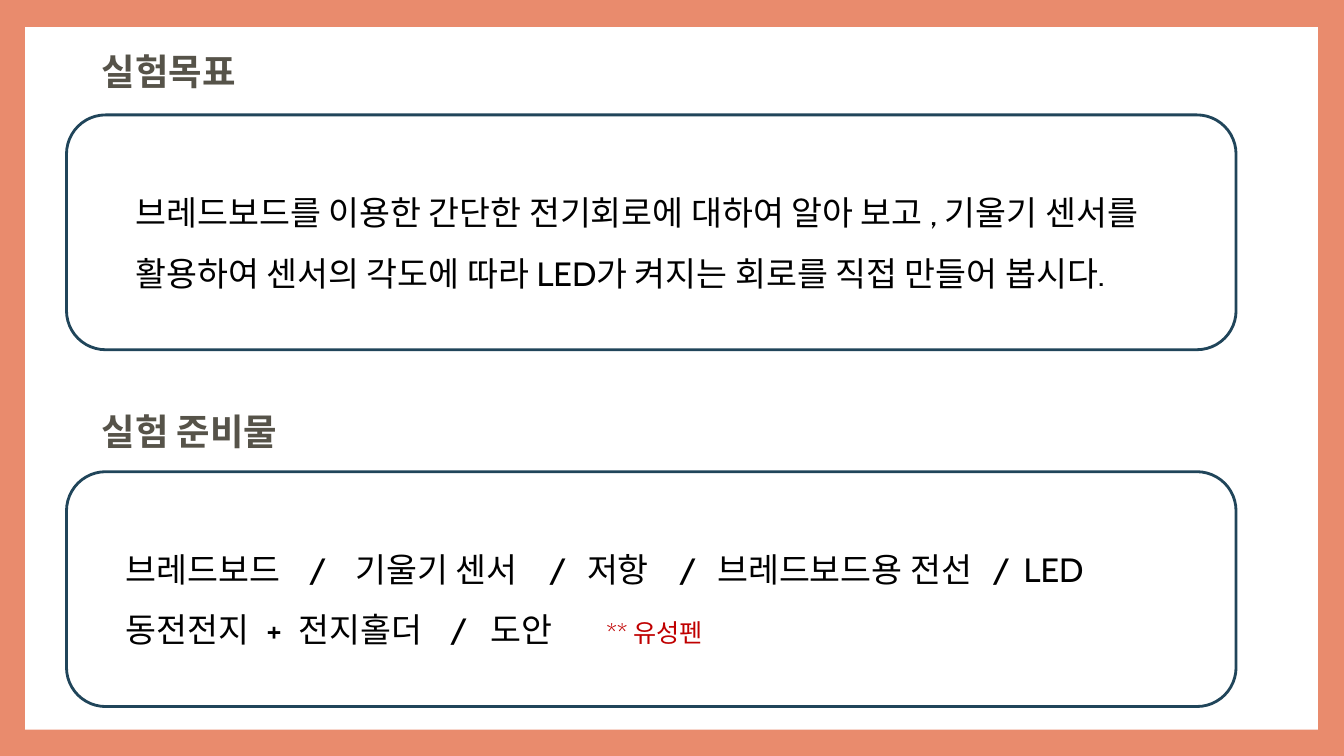
import pptx
import pptx.util
import pptx.dml.color
import pptx.enum.shapes
import pptx.enum.text
import pptx.oxml.ns
from lxml import etree

Inches = pptx.util.Inches
THEME = {
    "font": "Cabin",
    "border": "E98B6D", "paper": "FFFFFF", "outline": "20455A",
    "heading": "565349", "body": "000000", "extra": "C00000",
    "heading_size": 26, "body_size": 24, "extra_size": 18,
}


def colour(name):
    return pptx.dml.color.RGBColor.from_string(THEME[name])


def add_words(paragraph, words, style, bold=False):
    """Add a run in one of the theme's text styles."""
    run = paragraph.add_run()
    run.text = words
    look = {"name": THEME["font"], "bold": bold,
            "size": pptx.util.Pt(THEME[style + "_size"])}
    for attribute, value in look.items():
        setattr(run.font, attribute, value)
    run.font.color.rgb = colour(style)


deck = pptx.Presentation()
deck.slide_width, deck.slide_height = Inches(13.33), Inches(7.5)
slide = deck.slides.add_slide(deck.slide_layouts[6])

# Coloured border around a white page
slide.background.fill.solid()
slide.background.fill.fore_color.rgb = colour("border")
page = slide.shapes.add_shape(pptx.enum.shapes.MSO_SHAPE.RECTANGLE,
                              Inches(0.25), Inches(0.27), Inches(12.82), Inches(6.97))
page.shadow.inherit = False
page.fill.solid()
page.fill.fore_color.rgb = colour("paper")
page.line.fill.background()

# Each line: (runs as words and style, tab stops in inches)
sections = [
    {"heading": "실험목표", "heading_top": 0.39, "heading_width": 1.96,
     "panel_top": 1.14, "indent": 0.57, "lines": [
         ([("브레드보드를 이용한 간단한 전기회로에 대하여 알아 보고 , 기울기 센서를", "body")], []),
         ([("활용하여 센서의 각도에 따라 LED가 켜지는 회로를 직접 만들어 봅시다.", "body")], []),
     ]},
    {"heading": "실험 준비물", "heading_top": 3.96, "heading_width": 2.3,
     "panel_top": 4.68, "indent": 0.47, "lines": [
         ([("브레드보드\t/\t기울기 센서\t/\t저항\t/\t브레드보드용 전선\t/\tLED", "body")],
          [1.82, 2.28, 4.2, 4.58, 5.49, 5.87, 8.6, 8.91]),
         ([("동전전지\t+\t전지홀더\t/\t도안\t", "body"), ("** 유성펜", "extra")],
          [1.4, 1.72, 3.22, 3.62, 4.77]),
     ]},
]

for section in sections:
    # Heading
    heading = slide.shapes.add_textbox(Inches(0.91), Inches(section["heading_top"]),
                                       Inches(section["heading_width"]), Inches(0.48))
    heading_format = {"word_wrap": True}
    for side in ("left", "top", "right", "bottom"):
        heading_format["margin_" + side] = Inches(0.1)
    for attribute, value in heading_format.items():
        setattr(heading.text_frame, attribute, value)
    add_words(heading.text_frame.paragraphs[0], section["heading"], "heading", bold=True)

    # Rounded panel
    panel = slide.shapes.add_shape(pptx.enum.shapes.MSO_SHAPE.ROUNDED_RECTANGLE,
                                   Inches(0.66), Inches(section["panel_top"]),
                                   Inches(11.6), Inches(2.33))
    panel.shadow.inherit = False
    panel.fill.solid()
    panel.fill.fore_color.rgb = colour("paper")
    panel.line.color.rgb = colour("outline")
    panel.line.width = pptx.util.Pt(2)
    panel_format = {"word_wrap": True, "margin_left": Inches(section["indent"]),
                    "vertical_anchor": pptx.enum.text.MSO_ANCHOR.MIDDLE}
    for attribute, value in panel_format.items():
        setattr(panel.text_frame, attribute, value)

    # Panel text
    for number, (runs, stops) in enumerate(section["lines"]):
        frame = panel.text_frame
        paragraph = frame.add_paragraph() if number else frame.paragraphs[0]
        paragraph.alignment = pptx.enum.text.PP_ALIGN.LEFT
        paragraph.line_spacing = 1.5
        for words, style in runs:
            add_words(paragraph, words, style)
        if stops:
            properties = paragraph._p.get_or_add_pPr()
            tabs = etree.SubElement(properties, pptx.oxml.ns.qn("a:tabLst"))
            for stop in stops:
                etree.SubElement(tabs, pptx.oxml.ns.qn("a:tab"),
                                 pos=str(Inches(stop)), algn="l")

deck.save("out.pptx")
